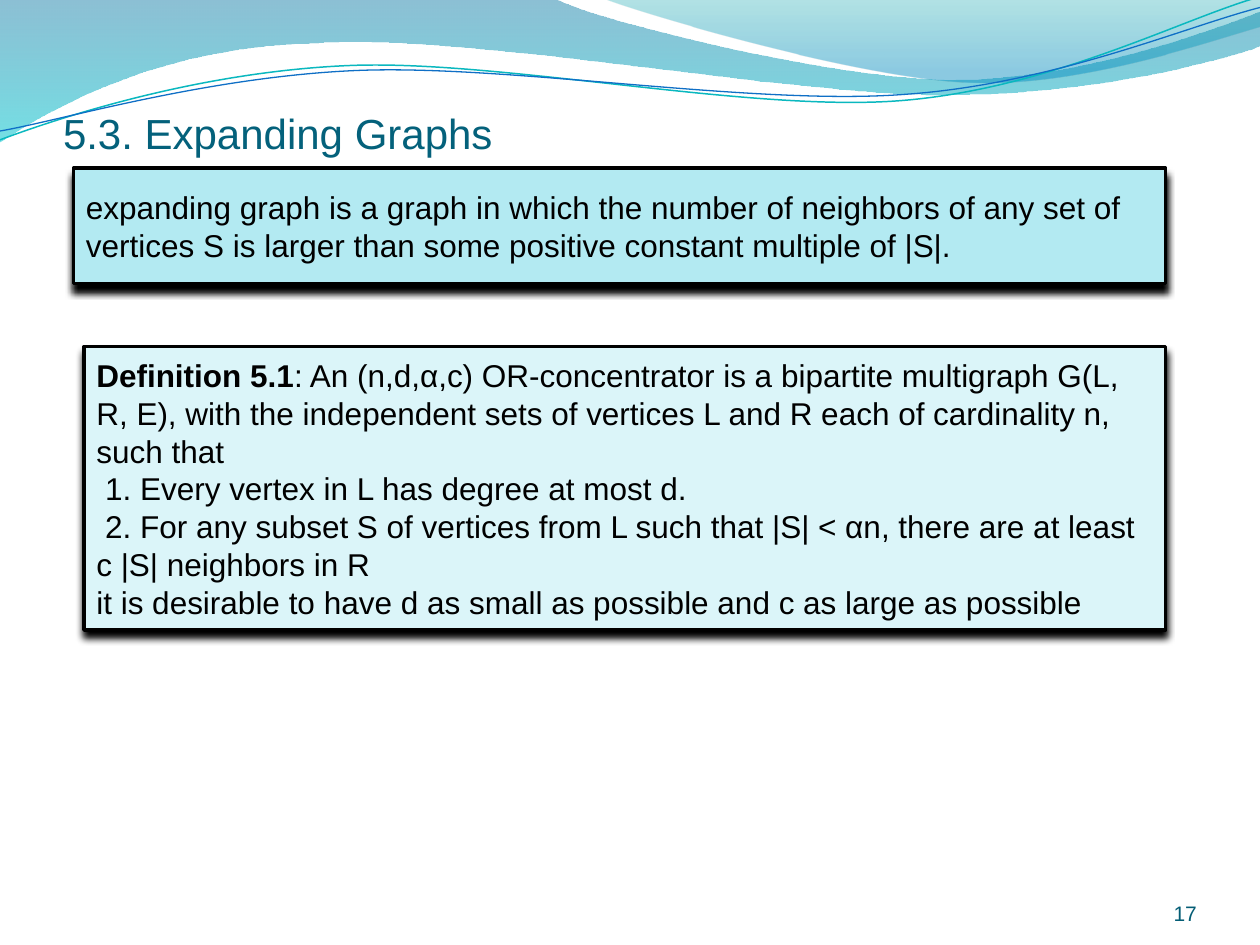
import math

from lxml import etree
from pptx import Presentation
from pptx import util as u
from pptx.dml import color
from pptx.enum import shapes, text
from pptx.oxml import ns

BLACK = "000000"
RIGHT = 9.25

BAND = [(0, 0), (4.4, -0.01),
        (4.76, 0.17, 6.64, 0.63, 7.58, 0.63),
        (8.53, 0.63, 9.58, 0.26, 10, 0.09),
        (10.01, 0.36),
        (9.83, 0.44, 8.7, 0.76, 7.46, 0.75),
        (6.22, 0.75, 3.82, 0.28, 2.57, 0.34),
        (1.29, 0.36, 0.46, 0.83, -0.01, 1.13),
        (0, 0)]
CREST = [(4.79, -0.01),
         (5.09, 0.11, 6.82, 0.62, 7.69, 0.65),
         (8.56, 0.69, 9.61, 0.32, 10, 0.21),
         (10, 0), (4.79, -0.01)]
TEAL = [(0, 1.11),
        (0.48, 0.93, 1.58, 0.57, 2.77, 0.52),
        (3.95, 0.47, 5.93, 0.89, 7.13, 0.8),
        (8.33, 0.71, 9.38, 0.15, 9.98, -0.02)]
BLUE = [(0, 1.04),
        (0.47, 0.96, 1.64, 0.61, 2.83, 0.56),
        (4.03, 0.51, 5.97, 0.84, 7.17, 0.75),
        (8.36, 0.67, 9.41, 0.21, 10, 0.06)]

DEFINITION = [
    ": An (n,d,α,c) OR-concentrator is a bipartite multigraph G(L, R, E), "
    "with the independent sets of vertices L and R each of cardinality n, such that",
    " 1. Every vertex in L has degree at most d.",
    " 2. For any subset S of vertices from L such that |S| < αn, "
    "there are at least c |S| neighbors in R",
    "it is desirable to have d as small as possible and c as large as possible",
]


def rgb(code):
    return color.RGBColor.from_string(code)


def rotate(path, angle, mid):
    cos, sin = math.cos(math.radians(angle)), math.sin(math.radians(angle))
    turned = []
    for part in path:
        spots = []
        for x, y in zip(part[::2], part[1::2]):
            dx, dy = x - mid[0], y - mid[1]
            spots += [mid[0] + dx * cos - dy * sin, mid[1] + dx * sin + dy * cos]
        turned.append(spots)
    return turned


class Deck:
    font = "Arial"

    def __init__(self, show):
        self.slide = show.slides.add_slide(show.slide_layouts[5])
        self.shapes = self.slide.shapes

    def style(self, frame, size, ink, align=text.PP_ALIGN.LEFT):
        for para in frame.paragraphs:
            para.alignment = align
            for run in para.runs:
                run.font.name = self.font
                run.font.size = u.Pt(size)
                run.font.color.rgb = rgb(ink)

    def setup(self, frame, anchor, insets):
        frame.word_wrap = True
        frame.auto_size = text.MSO_AUTO_SIZE.NONE
        frame.vertical_anchor = anchor
        sides = [u.Inches(v) for v in insets]
        (frame.margin_left, frame.margin_top,
         frame.margin_right, frame.margin_bottom) = sides

    def place(self, shape, box):
        shape.left, shape.top, shape.width, shape.height = [u.Inches(v) for v in box]

    def outline(self, path, close):
        dots = [(u.Inches(x), u.Inches(y))
                for part in path for x, y in zip(part[::2], part[1::2])]
        pen = self.shapes.build_freeform(*dots[0])
        pen.add_line_segments(dots[1:], close=close)
        shape = pen.convert_to_shape()
        shape.shadow.inherit = False
        self.bend(shape, path)
        return shape

    def bend(self, shape, path):
        lines = iter(list(shape.element.spPr.iter(ns.qn("a:lnTo"))))
        for part in path[1:]:
            line = next(lines)
            if len(part) == 6:
                line.tag = ns.qn("a:cubicBezTo")
                for extra in (next(lines), next(lines)):
                    line.append(extra[0])
                    extra.getparent().remove(extra)

    def wave(self, path, stops):
        shape = self.outline(path, True)
        shape.line.fill.background()
        shape.fill.gradient()
        shape.fill.gradient_angle = 270
        for stop, (spot, code, alpha) in zip(shape.fill.gradient_stops, stops):
            stop.position = spot
            stop.color.rgb = rgb(code)
        tints = shape.element.spPr.iter(ns.qn("a:srgbClr"))
        for tint, (spot, code, alpha) in zip(tints, stops):
            etree.SubElement(tint, ns.qn("a:alpha"), val=str(alpha * 1000))

    def strand(self, path, mid, code, width):
        tilt = 357.3
        shape = self.outline(rotate(path, -tilt, mid), False)
        shape.rotation = tilt
        shape.fill.background()
        shape.line.color.rgb = rgb(code)
        shape.line.width = u.Pt(width)

    def title(self, words, box):
        shape = self.shapes.title
        self.shapes.element.append(shape.element)
        self.place(shape, box)
        shape.text_frame.text = words
        self.setup(shape.text_frame, text.MSO_ANCHOR.BOTTOM, (0, 0.05, 0, 0))
        self.style(shape.text_frame, 24, "04617B")

    def number(self, words, box):
        shape = self.shapes.add_textbox(*[u.Inches(v) for v in box])
        shape.text_frame.text = words
        self.setup(shape.text_frame, text.MSO_ANCHOR.BOTTOM, (0, 0, 0, 0))
        self.style(shape.text_frame, 12, "045D75", text.PP_ALIGN.RIGHT)

    def panel(self, lines, left, top, height, fill, lead=""):
        box = (left, top, RIGHT - left, height)
        shape = self.shapes.add_shape(shapes.MSO_SHAPE.RECTANGLE,
                                      *[u.Inches(v) for v in box])
        shape.fill.solid()
        shape.fill.fore_color.rgb = rgb(fill)
        shape.line.color.rgb = rgb(BLACK)
        shape.line.width = u.Pt(2)
        self.shade(shape)
        frame = shape.text_frame
        frame.text = "\n".join(lines)
        if lead:
            first = frame.paragraphs[0]
            first.text = lead
            first.runs[0].font.bold = True
            first.add_run().text = lines[0]
        self.setup(frame, text.MSO_ANCHOR.MIDDLE, (0.1, 0.05, 0.1, 0.05))
        self.style(frame, 18, BLACK)

    def shade(self, shape):
        shape.shadow.inherit = False
        effects = shape.element.spPr.find(ns.qn("a:effectLst"))
        reach = str(u.Pt(4))
        drop = etree.SubElement(effects, ns.qn("a:outerShdw"), blurRad=reach,
                                dist=reach, dir="5400000", algn="t", rotWithShape="0")
        etree.SubElement(drop, ns.qn("a:srgbClr"), val=BLACK)


def main():
    show = Presentation()
    show.slide_width, show.slide_height = u.Inches(10), u.Inches(7.5)
    deck = Deck(show)
    deck.wave(BAND, [(0, "0074A1", 45), (1, "00C6CF", 55)])
    deck.wave(CREST, [(0, "00A1A9", 30), (0.8, "008BBF", 45)])
    deck.strand(TEAL, (4.99, 0.58), "0AB8BF", 0.85)
    deck.strand(BLUE, (5, 0.59), "0F6FC6", 0.75)
    deck.title("5.3. Expanding Graphs", (0.5, 0.3, 9, 0.95))
    deck.number("17", (8.67, 6.95, 0.83, 0.4))
    deck.panel(["expanding graph is a graph in which the number of neighbors of any set "
                "of vertices S is larger than some positive constant multiple of |S|."],
               7 / 12, 4 / 3, 11 / 12, "B3EAF2")
    deck.panel(DEFINITION, 2 / 3, 2.75, 2.25, "DBF5F9", "Definition 5.1")
    show.save("out.pptx")


if __name__ == "__main__":
    main()
